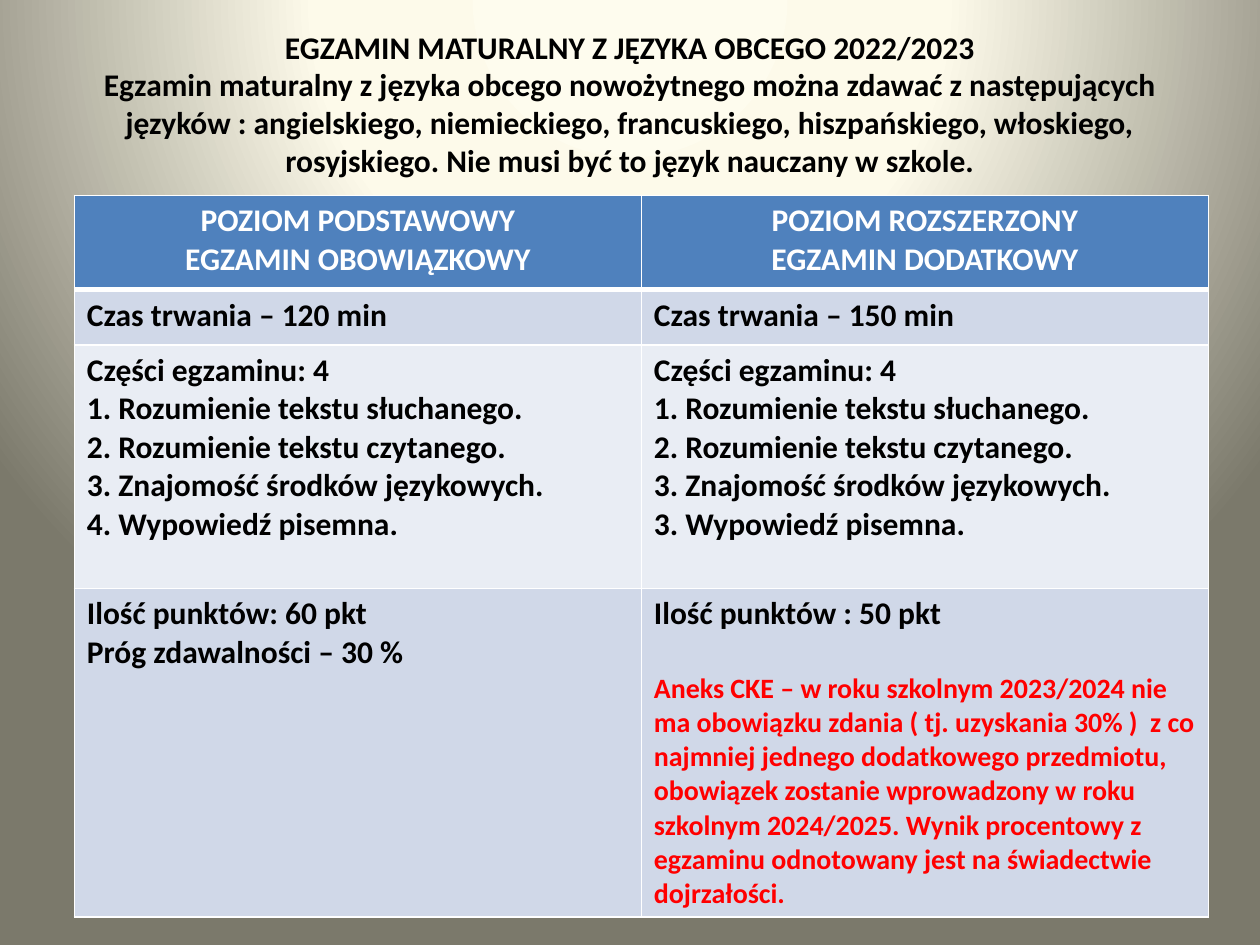
from pptx import Presentation
from pptx import oxml
from pptx import util as u
from pptx.dml.color import RGBColor
from pptx.enum import text
from pptx.oxml import ns

BLACK = RGBColor(0x00, 0x00, 0x00)
WHITE = RGBColor(0xFF, 0xFF, 0xFF)
RED = RGBColor(0xFF, 0x00, 0x00)
BLUE = RGBColor(0x4F, 0x81, 0xBD)
BAND_DARK = RGBColor(0xD0, 0xD8, 0xE8)
BAND_LIGHT = RGBColor(0xE9, 0xED, 0xF4)
GRADIENT = ((0, RGBColor(0xFE, 0xFC, 0xEE)), (40, RGBColor(0xFD, 0xFA, 0xEA)),
            (100, RGBColor(0x7B, 0x79, 0x6B)))

BODY = {"name": "Calibri", "size": u.Pt(18), "bold": True}
NOTE = {**BODY, "size": u.Pt(16)}

TITLE = (
    "EGZAMIN MATURALNY Z JĘZYKA OBCEGO 2022/2023\v"
    "Egzamin maturalny z języka obcego nowożytnego można zdawać z następujących "
    "języków : angielskiego, niemieckiego, francuskiego, hiszpańskiego, włoskiego, "
    "rosyjskiego. Nie musi być to język nauczany w szkole."
)
ANNEX = (
    "Aneks CKE – w roku szkolnym 2023/2024 nie ma obowiązku zdania "
    "( tj. uzyskania 30% )  z co najmniej jednego dodatkowego przedmiotu, "
    "obowiązek zostanie wprowadzony w roku szkolnym 2024/2025. Wynik procentowy "
    "z egzaminu odnotowany jest na świadectwie dojrzałości."
)
PARTS = [
    "Części egzaminu: 4",
    "1. Rozumienie tekstu słuchanego.",
    "2. Rozumienie tekstu czytanego.",
    "3. Znajomość środków językowych.",
]
ROWS = [
    (0.75, BLUE, ["POZIOM PODSTAWOWY", "EGZAMIN OBOWIĄZKOWY"],
     ["POZIOM ROZSZERZONY", "EGZAMIN DODATKOWY"]),
    (0.44, BAND_DARK, ["Czas trwania – 120 min"], ["Czas trwania – 150 min"]),
    (1.93, BAND_LIGHT, PARTS + ["4. Wypowiedź pisemna."],
     PARTS + ["3. Wypowiedź pisemna."]),
    (2.61, BAND_DARK, ["Ilość punktów: 60 pkt", "Próg zdawalności – 30 %"],
     ["Ilość punktów : 50 pkt", ANNEX]),
]


def format_paragraph(paragraph, values, color, alignment):
    paragraph.alignment = alignment
    for run in paragraph.runs:
        for name, value in values.items():
            setattr(run.font, name, value)
        run.font.color.rgb = color


def set_background(slide):
    slide.background.fill.gradient()
    stops = "".join(
        f'<a:gs pos="{position * 1000}"><a:srgbClr val="{color}"/></a:gs>'
        for position, color in GRADIENT)
    gradient = oxml.parse_xml(
        f'<a:gradFill {ns.nsdecls("a")} rotWithShape="1"><a:gsLst>{stops}</a:gsLst>'
        '<a:path path="circle"><a:fillToRect l="50000" t="-80000" r="50000" '
        'b="180000"/></a:path></a:gradFill>')
    old = slide.element.xpath(".//a:gradFill")[0]
    old.getparent().replace(old, gradient)


def add_title(slide, left, top, width, height):
    frame = slide.shapes.add_textbox(left, top, width, height).text_frame
    settings = {"word_wrap": True, "vertical_anchor": text.MSO_ANCHOR.MIDDLE,
                "margin_bottom": u.Inches(0.19)}
    for name, value in settings.items():
        setattr(frame, name, value)
    frame.text = TITLE
    format_paragraph(frame.paragraphs[0], BODY, BLACK, text.PP_ALIGN.CENTER)


def set_borders(cell, widths):
    properties = cell._tc.get_or_add_tcPr()
    for index, (side, width) in enumerate(widths.items()):
        line = oxml.parse_xml(
            f'<a:ln{side} {ns.nsdecls("a")} w="{u.Pt(width)}"><a:solidFill>'
            f'<a:srgbClr val="{WHITE}"/></a:solidFill></a:ln{side}>')
        properties.insert(index, line)


def fill_cell(cell, lines, fill, is_header):
    cell.fill.solid()
    cell.fill.fore_color.rgb = fill
    cell.text_frame.text = "\n".join(lines)
    color = WHITE if is_header else BLACK
    alignment = text.PP_ALIGN.CENTER if is_header else text.PP_ALIGN.LEFT
    for line, paragraph in zip(lines, cell.text_frame.paragraphs):
        if line == ANNEX:
            paragraph.space_before = u.Pt(22)
            format_paragraph(paragraph, NOTE, RED, alignment)
        else:
            format_paragraph(paragraph, BODY, color, alignment)


def add_exam_table(slide, left, top, width, height):
    table = slide.shapes.add_table(len(ROWS), 2, left, top, width, height).table
    for column in table.columns:
        column.width = width // 2
    for row_index, (row_height, fill, *cells) in enumerate(ROWS):
        table.rows[row_index].height = u.Inches(row_height)
        borders = {"L": 1, "R": 1, "T": 3 if row_index == 1 else 1,
                   "B": 3 if row_index == 0 else 1}
        for column_index, lines in enumerate(cells):
            cell = table.cell(row_index, column_index)
            fill_cell(cell, lines, fill, row_index == 0)
            set_borders(cell, borders)


def main():
    presentation = Presentation()
    presentation.slide_width = u.Inches(10)
    presentation.slide_height = u.Inches(7.5)
    slide = presentation.slides.add_slide(presentation.slide_layouts[6])
    set_background(slide)
    add_title(slide, u.Inches(0.5), u.Inches(0), u.Inches(9), u.Inches(1.78))
    table_height = u.Inches(sum(row[0] for row in ROWS))
    add_exam_table(slide, u.Inches(0.59), u.Inches(1.55), u.Inches(9), table_height)
    presentation.save("out.pptx")


if __name__ == "__main__":
    main()
